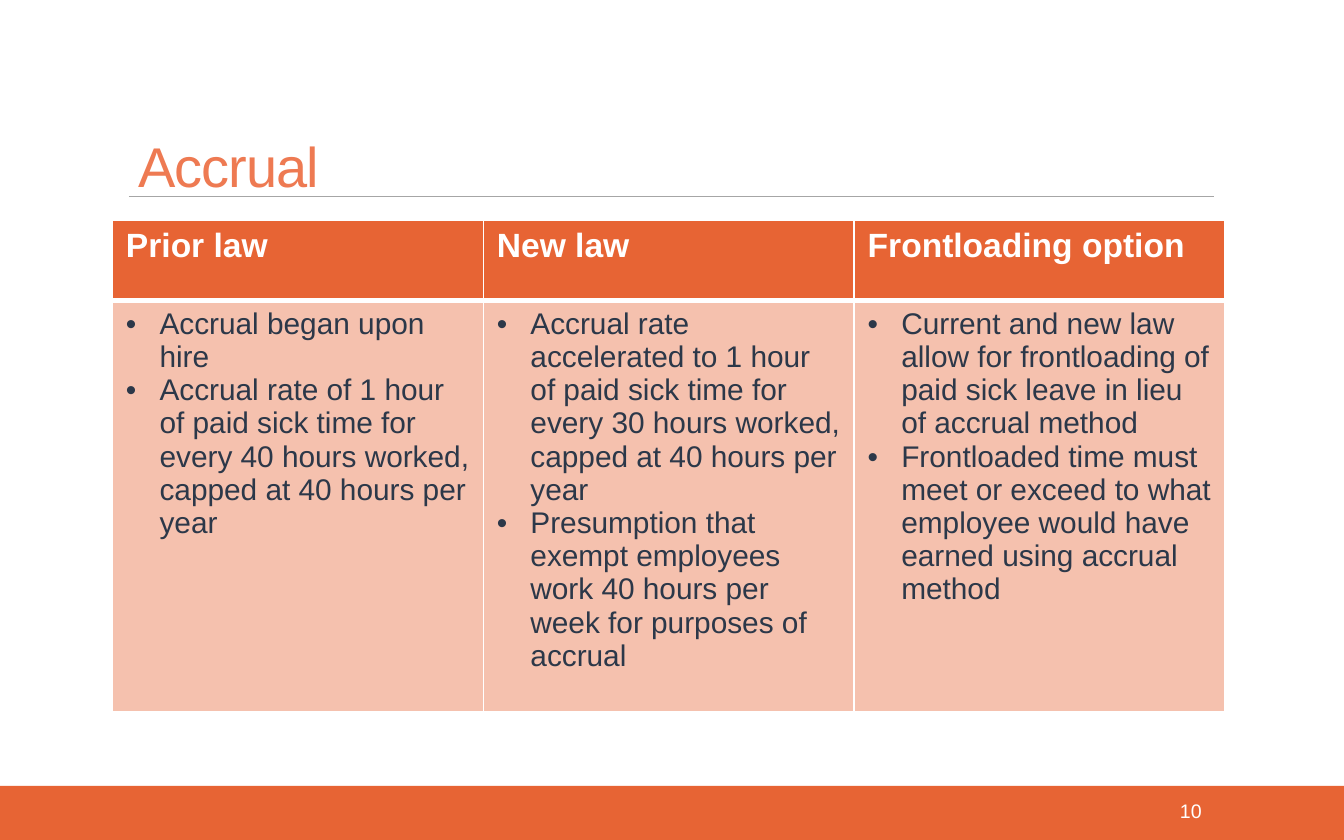
"""Build the slide that compares sick-time accrual rules."""
from dataclasses import dataclass

from lxml.etree import SubElement
from pptx import Presentation
from pptx.dml.color import RGBColor
from pptx.enum.shapes import MSO_CONNECTOR, MSO_SHAPE
from pptx.enum.text import MSO_ANCHOR, PP_ALIGN
from pptx.oxml.ns import qn
from pptx.util import Pt


@dataclass(frozen=True)
class Theme:
    font: str = "Arial"
    accent: str = "E76434"
    title: str = "EE7A52"
    tint: str = "F5C1AE"
    ink: str = "2C3849"
    rule: str = "A6A6A6"
    white: str = "FFFFFF"
    title_size: float = 30
    header_size: float = 18
    body_size: float = 16
    number_size: float = 10.5


THEME = Theme()

COLUMNS = {
    "Prior law": [
        "Accrual began upon hire",
        "Accrual rate of 1 hour of paid sick time for every 40 hours worked, "
        "capped at 40 hours per year",
    ],
    "New law": [
        "Accrual rate accelerated to 1 hour of paid sick time for every 30 hours worked, "
        "capped at 40 hours per year",
        "Presumption that exempt employees work 40 hours per week for purposes of accrual",
    ],
    "Frontloading option": [
        "Current and new law allow for frontloading of paid sick leave in lieu of accrual method",
        "Frontloaded time must meet or exceed to what employee would have earned "
        "using accrual method",
    ],
}


def write(paragraph, text, *, size, color, bold=False, bullet=False,
          align=PP_ALIGN.LEFT, line_spacing=None, tracking=None):
    paragraph.alignment = align
    if line_spacing:
        paragraph.line_spacing = line_spacing
    if bullet:
        properties = paragraph._p.get_or_add_pPr()
        properties.set("marL", str(Pt(18)))
        properties.set("indent", str(-Pt(18)))
        SubElement(properties, qn("a:buFont")).set("typeface", THEME.font)
        SubElement(properties, qn("a:buChar")).set("char", "•")
    run = paragraph.add_run()
    run.text = text
    run.font.name = THEME.font
    run.font.size = Pt(size)
    run.font.bold = bold
    run.font.color.rgb = RGBColor.from_string(color)
    if tracking:
        run._r.get_or_add_rPr().set("spc", str(round(tracking * 100)))


def add_label(slide, text, left, top, width, height, *, anchor, inset_top=0, **text_format):
    frame = slide.shapes.add_textbox(Pt(left), Pt(top), Pt(width), Pt(height)).text_frame
    frame.word_wrap = True
    frame.vertical_anchor = anchor
    frame.margin_top, frame.margin_bottom = Pt(inset_top), 0
    write(frame.paragraphs[0], text, **text_format)


def add_footer_band(slide):
    band = slide.shapes.add_shape(MSO_SHAPE.RECTANGLE, 0, Pt(421), Pt(720), Pt(29))
    band.shadow.inherit = False
    band.fill.solid()
    band.fill.fore_color.rgb = RGBColor.from_string(THEME.accent)
    band.line.fill.background()


def add_title_rule(slide):
    rule = slide.shapes.add_connector(MSO_CONNECTOR.STRAIGHT, Pt(69), Pt(105.3), Pt(650.3), Pt(105.3))
    rule.line.color.rgb = RGBColor.from_string(THEME.rule)
    rule.line.width = Pt(1)
    SubElement(rule._element.spPr, qn("a:effectLst"))


def style_cell(cell, fill, top, bottom):
    properties = cell._tc.get_or_add_tcPr()
    for side, width in (("L", 1), ("R", 1), ("T", top), ("B", bottom)):
        border = SubElement(properties, qn(f"a:ln{side}"), w=str(Pt(width)))
        color = SubElement(SubElement(border, qn("a:solidFill")), qn("a:srgbClr"))
        color.set("val", THEME.white)
    cell.fill.solid()
    cell.fill.fore_color.rgb = RGBColor.from_string(fill)


def add_comparison(slide, columns):
    column_width, header_height, body_height = 198.7, 43, 220
    table = slide.shapes.add_table(
        2, len(columns), Pt(60.3), Pt(118.2),
        Pt(column_width * len(columns)), Pt(header_height + body_height)).table
    table.horz_banding = False
    table.rows[0].height, table.rows[1].height = Pt(header_height), Pt(body_height)
    for index, (heading, points) in enumerate(columns.items()):
        table.columns[index].width = Pt(column_width)
        header, body = table.cell(0, index), table.cell(1, index)
        style_cell(header, THEME.accent, top=1, bottom=3)
        style_cell(body, THEME.tint, top=3, bottom=1)
        write(header.text_frame.paragraphs[0], heading,
              size=THEME.header_size, color=THEME.white, bold=True)
        for order, point in enumerate(points):
            frame = body.text_frame
            paragraph = frame.add_paragraph() if order else frame.paragraphs[0]
            write(paragraph, point, size=THEME.body_size, color=THEME.ink, bullet=True)


def main():
    deck = Presentation()
    deck.slide_width, deck.slide_height = Pt(720), Pt(450)
    slide = deck.slides.add_slide(deck.slide_layouts[6])
    add_footer_band(slide)
    add_title_rule(slide)
    add_label(slide, "Accrual", 67, 70, 458.6, 28, anchor=MSO_ANCHOR.TOP, inset_top=6,
              size=THEME.title_size, color=THEME.title, line_spacing=0.85, tracking=-0.5)
    add_label(slide, "10", 573, 422.4, 77.8, 24, anchor=MSO_ANCHOR.MIDDLE,
              size=THEME.number_size, color=THEME.white, align=PP_ALIGN.RIGHT)
    add_comparison(slide, COLUMNS)
    deck.save("out.pptx")


if __name__ == "__main__":
    main()
